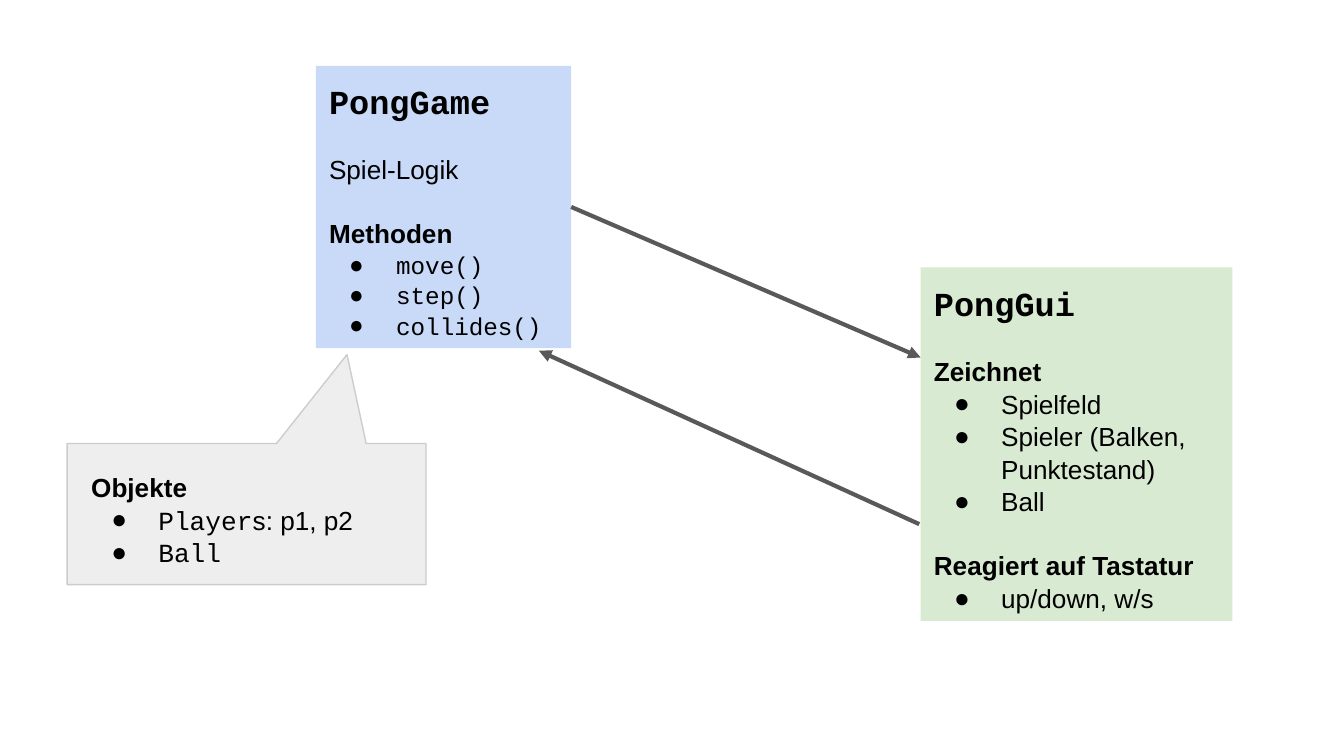
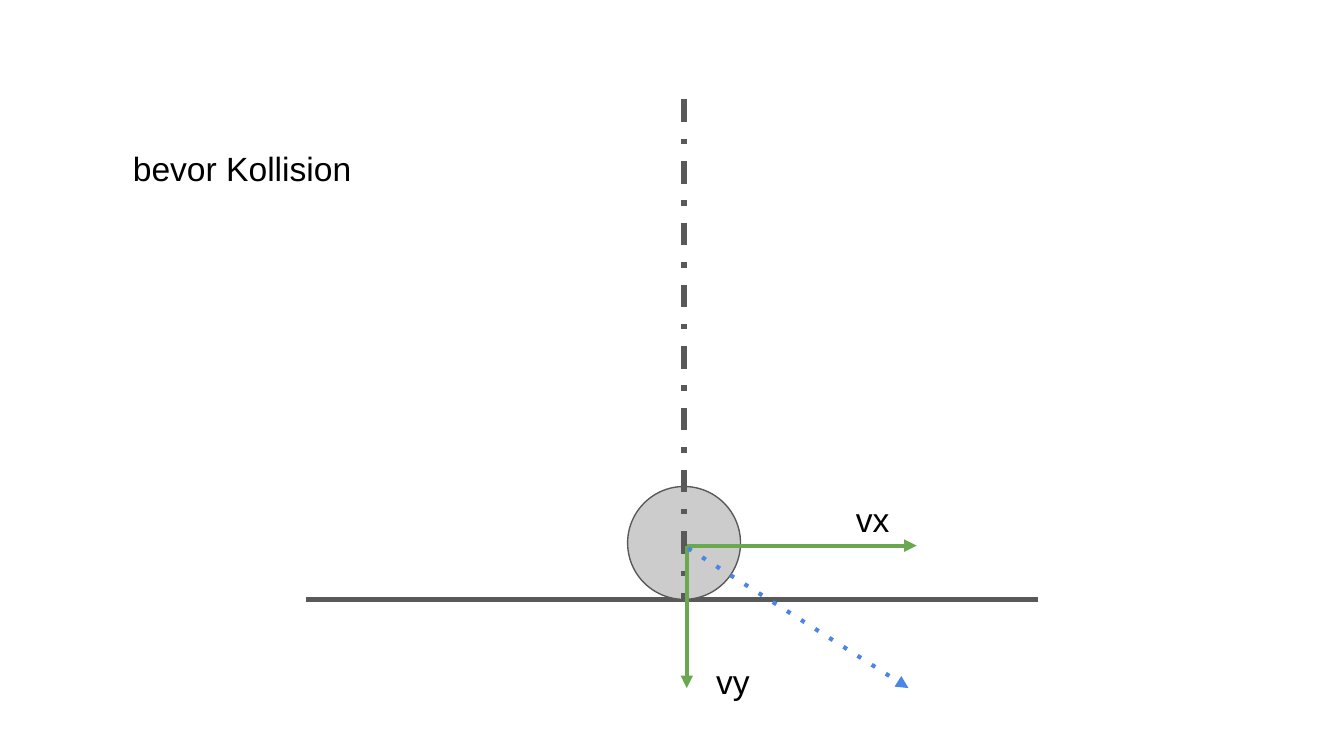
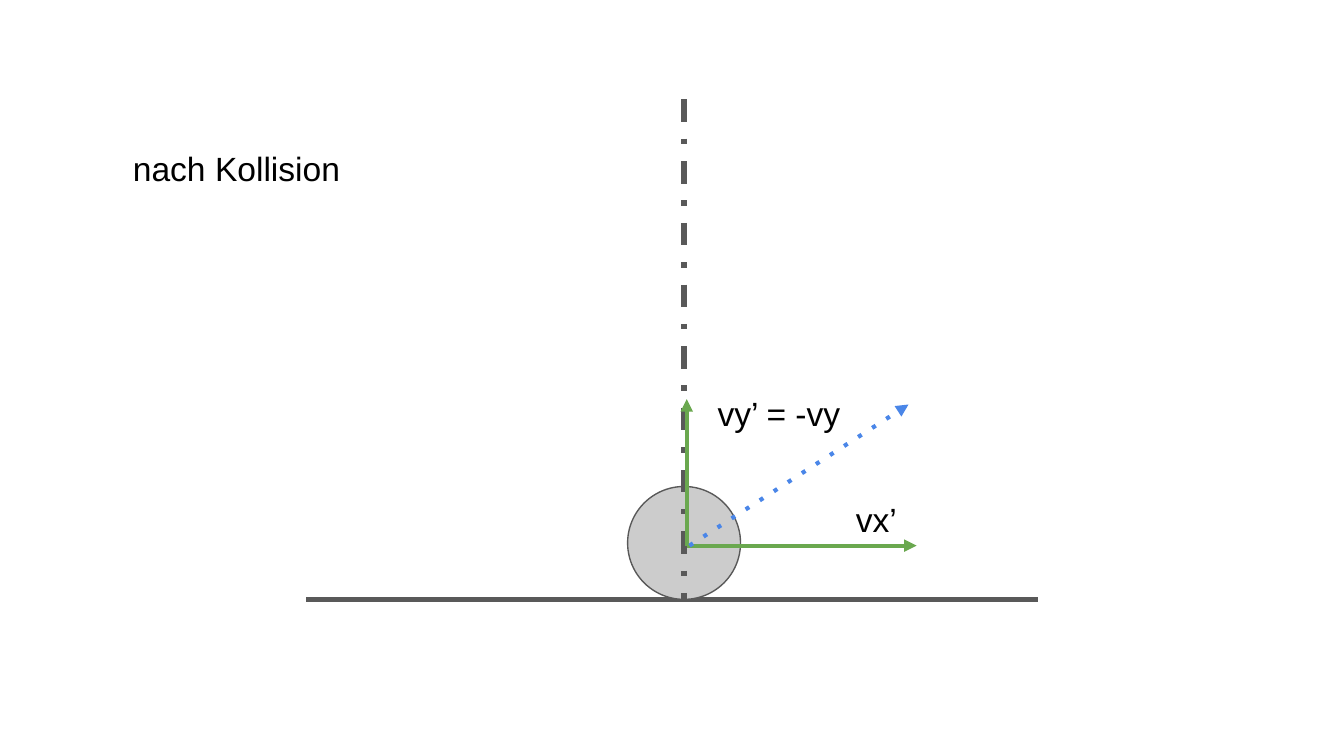
from lxml.etree import SubElement
from pptx import Presentation
from pptx.dml.color import RGBColor
from pptx.enum.shapes import MSO_CONNECTOR, MSO_SHAPE
from pptx.enum.text import MSO_ANCHOR, PP_ALIGN
from pptx.oxml.ns import qn
from pptx.util import Inches, Pt

# Square grid: 100 columns by 56.25 rows
COLS, ROWS = 100, 56.25
CELL = Inches(0.1)

BLACK = RGBColor(0x00, 0x00, 0x00)
DARK = RGBColor(0x59, 0x59, 0x59)
BALL_GRAY = RGBColor(0xCC, 0xCC, 0xCC)
NOTE_GRAY = RGBColor(0xEE, 0xEE, 0xEE)
LOGIC_BLUE = RGBColor(0xC9, 0xDA, 0xF8)
GUI_GREEN = RGBColor(0xD9, 0xEA, 0xD3)
PART_GREEN = RGBColor(0x6A, 0xA8, 0x4F)
SPEED_BLUE = RGBColor(0x4A, 0x86, 0xE8)

SANS, MONO = "Arial", "Courier New"
SIZE, CODE_SIZE, BIG = 14, 13, 18
LINE_SPACING = 1.04
GAP = 16.8

CENTER_X, CENTER_Y, GROUND_Y, RADIUS = 50.9, 40.4, 44.6, 4.2
ORIGIN = (51.1, 40.6)


def grid(*cells):
    return [round(c * CELL) for c in cells]


def add_run(p, text, font=SANS, size=SIZE, bold=False):
    r = p.add_run()
    r.text = text
    r.font.name, r.font.size, r.font.bold = font, Pt(size), bold
    r.font.color.rgb = BLACK


def add_text(tf, text, bullet=False, gap=0, **fmt):
    """Append a paragraph; text is a string or a list of (string, font) pairs."""
    p = tf.paragraphs[0]
    if p.runs:
        p = tf.add_paragraph()
    p.alignment = PP_ALIGN.LEFT
    p.line_spacing = LINE_SPACING
    p.space_before = Pt(gap)
    if bullet:
        pPr = p._p.get_or_add_pPr()
        pPr.set("marL", str(Inches(0.5)))
        pPr.set("indent", str(-Inches(0.35)))
        color = SubElement(pPr, qn("a:buClr"))
        SubElement(color, qn("a:srgbClr"), val=str(BLACK))
        SubElement(pPr, qn("a:buFont"), typeface=SANS)
        SubElement(pPr, qn("a:buChar"), char="●")
    if isinstance(text, str):
        add_run(p, text, **fmt)
    else:
        for part, font in text:
            add_run(p, part, font=font, **fmt)


def add_bullets(tf, items, **fmt):
    for item in items:
        add_text(tf, item, bullet=True, **fmt)


def prepare_frame(sp):
    tf = sp.text_frame
    tf.word_wrap = True
    tf.vertical_anchor = MSO_ANCHOR.TOP
    tf.margin_left = tf.margin_right = tf.margin_top = tf.margin_bottom = CELL
    return tf


def add_text_box(slide, *box):
    return prepare_frame(slide.shapes.add_textbox(*grid(*box)))


def add_label(slide, text, *box):
    add_text(add_text_box(slide, *box), text, size=BIG)


def add_figure(slide, kind, box, fill, line=None):
    sp = slide.shapes.add_shape(kind, *grid(*box))
    sp.shadow.inherit = False
    sp.fill.solid()
    sp.fill.fore_color.rgb = fill
    if line is None:
        sp.line.fill.background()
    else:
        sp.line.color.rgb = line
        sp.line.width = Pt(0.75)
    return sp


def add_class_box(slide, name, box, fill):
    tf = prepare_frame(add_figure(slide, MSO_SHAPE.RECTANGLE, box, fill))
    add_text(tf, name, font=MONO, size=BIG, bold=True)
    return tf


def add_line(slide, start, end, color=DARK, width=2.25, dash=None, arrow=True):
    sp = slide.shapes.add_connector(MSO_CONNECTOR.STRAIGHT, *grid(*start, *end))
    sp.line.color.rgb = color
    sp.line.width = Pt(width)
    ln = sp.line._get_or_add_ln()
    if dash:
        SubElement(ln, qn("a:prstDash"), val=dash)
    if arrow:
        SubElement(ln, qn("a:tailEnd"), type="triangle")
    SubElement(sp._element.spPr, qn("a:effectLst"))


def new_slide(prs):
    return prs.slides.add_slide(prs.slide_layouts[6])


def build_classes(prs):
    slide = new_slide(prs)

    tf = add_class_box(slide, "PongGame", (23.5, 4.9, 19, 21), LOGIC_BLUE)
    add_text(tf, "Spiel-Logik", gap=GAP)
    add_text(tf, "Methoden", gap=GAP, bold=True)
    add_bullets(tf, ["move()", "step()", "collides()"], font=MONO, size=CODE_SIZE)

    tf = add_class_box(slide, "PongGui", (68.5, 19.9, 23.2, 26.3), GUI_GREEN)
    add_text(tf, "Zeichnet", gap=GAP, bold=True)
    add_bullets(tf, ["Spielfeld", "Spieler (Balken, Punktestand)", "Ball"])
    add_text(tf, "Reagiert auf Tastatur", gap=GAP, bold=True)
    add_bullets(tf, ["up/down, w/s"])

    add_line(slide, (42.5, 15.4), (68.5, 26.6))
    add_line(slide, (68.4, 39), (40.1, 26.1))

    note = add_figure(slide, MSO_SHAPE.RECTANGULAR_CALLOUT, (5, 33, 26.7, 10.5),
                      NOTE_GRAY, BALL_GRAY)
    note.adjustments[0], note.adjustments[1] = 0.28, -1.13
    tf = add_text_box(slide, 5.8, 34, 25.1, 8.6)
    add_text(tf, "Objekte", bold=True)
    add_bullets(tf, [[("Player", MONO), ("s: p1, p2", SANS)], [("Ball", MONO)]])


def build_collision(prs, title, vx, vy, vy_end, vy_box, speed):
    """Ball on the ground with its speed, split into parts vx and vy."""
    slide = new_slide(prs)
    add_line(slide, (22.8, GROUND_Y), (77.2, GROUND_Y), width=3, arrow=False)
    add_figure(slide, MSO_SHAPE.OVAL,
               (CENTER_X - RADIUS, CENTER_Y - RADIUS, 2 * RADIUS, 2 * RADIUS),
               BALL_GRAY, DARK)
    add_line(slide, (CENTER_X, 7.4), (CENTER_X, GROUND_Y), width=3,
             dash="dashDot", arrow=False)
    add_line(slide, ORIGIN, (68.2, ORIGIN[1]), PART_GREEN)
    add_label(slide, vx, 62.7, 36, 7, 3.9)
    add_line(slide, ORIGIN, (ORIGIN[0], vy_end), PART_GREEN)
    add_label(slide, vy, *vy_box)
    add_label(slide, title, 8.9, 9.9, 22.9, 8)
    add_line(slide, *speed, SPEED_BLUE, dash="dot")


def main():
    prs = Presentation()
    prs.slide_width, prs.slide_height = grid(COLS, ROWS)
    build_classes(prs)
    build_collision(prs, "bevor Kollision", "vx", "vy", 51.2,
                    (52.3, 48.1, 6.3, 5.3), ((51.2, 40.8), (67.6, 51.2)))
    build_collision(prs, "nach Kollision", "vx’", "vy’ = -vy", 29.7,
                    (52.4, 28.1, 13.1, 5.3), ((51.3, 40.6), (67.6, 30.1)))
    prs.save("out.pptx")


if __name__ == "__main__":
    main()
